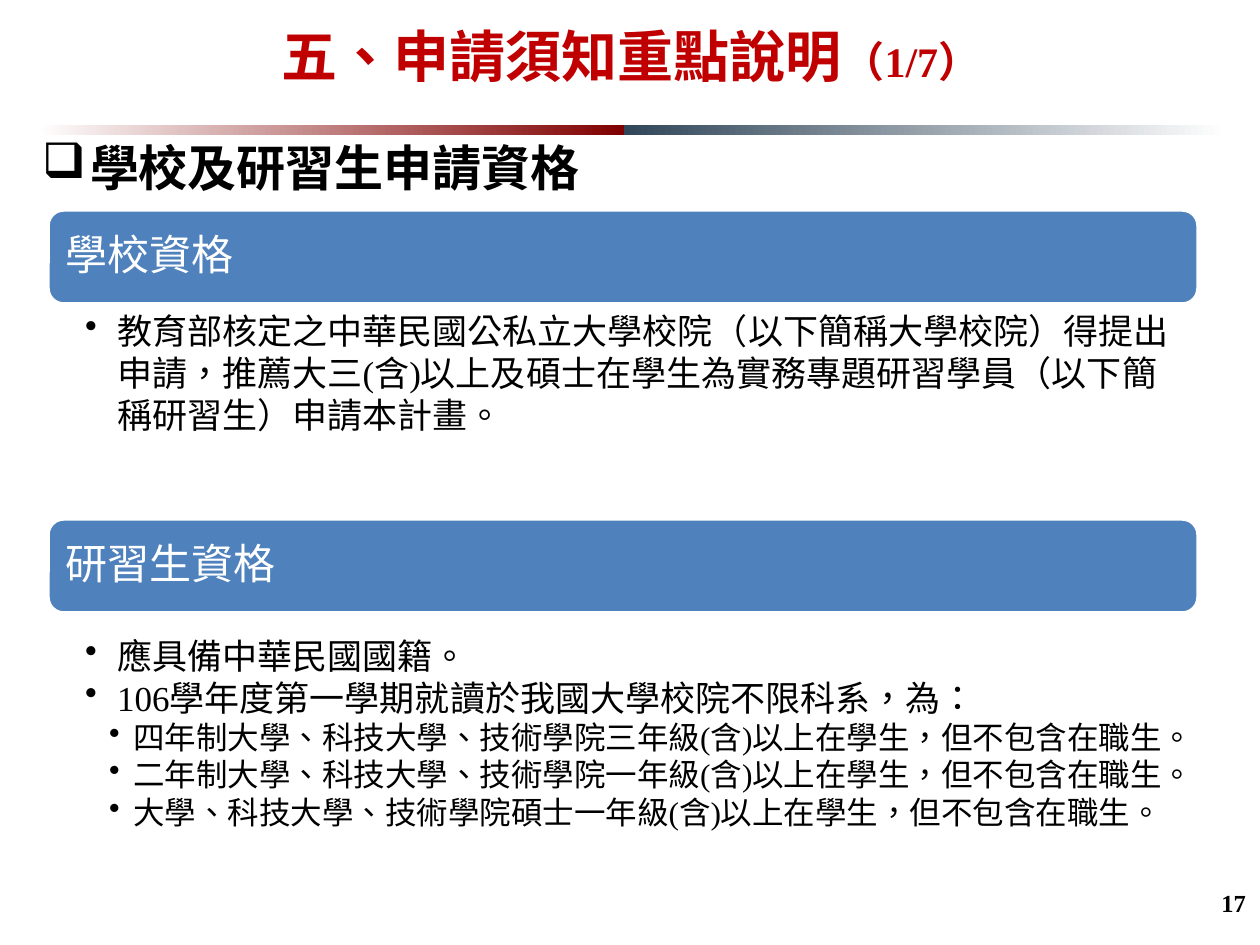
from dataclasses import dataclass

from lxml import etree
from pptx import Presentation
from pptx import util as u
from pptx.dml.color import RGBColor
from pptx.enum import shapes, text
from pptx.oxml import ns

"""Build the slide on school and trainee eligibility."""

PX = 914400 / 126
CJK, LATIN = "Noto Sans CJK SC", "Times New Roman"
BLACK, WHITE, RED, BLUE = "000000", "FFFFFF", "C00000", "4F81BD"


@dataclass
class Box:
    x: int
    y: int
    w: int
    h: int


@dataclass
class Item:
    words: str
    size: int = 20
    spacing: float = 24
    margin: int = 32
    indent: int = 32


@dataclass
class Section:
    label: str
    top: int
    body: Box
    items: list[Item]


def px(n: int) -> int:
    """Turn pixels into EMU."""
    return round(n * PX)


def place(b: Box) -> tuple[int, ...]:
    """Give a box as EMU lengths."""
    return tuple(px(n) for n in (b.x, b.y, b.w, b.h))


def colour(value: str) -> RGBColor:
    """Turn a hex string into a colour."""
    return RGBColor.from_string(value)


def add_run(p, words: str, *, size: int, font: str = LATIN, color: str = BLACK,
            bold: bool = False) -> None:
    """Add formatted text to a paragraph."""
    r = p.add_run()
    r.text = words
    r.font.size, r.font.name, r.font.bold = u.Pt(size), font, bold
    r.font.color.rgb = colour(color)
    rpr = r._r.get_or_add_rPr()
    rpr.set("lang", "zh-TW")
    latin = rpr.find(ns.qn("a:latin"))
    latin.addnext(etree.Element(ns.qn("a:ea"), typeface=CJK))


def set_frame(tf, insets: tuple[int, int, int, int], anchor=text.MSO_ANCHOR.TOP):
    """Set wrapping, insets and anchor, and return the first paragraph."""
    tf.word_wrap = True
    tf.margin_left, tf.margin_top, tf.margin_right, tf.margin_bottom = map(px, insets)
    tf.vertical_anchor = anchor
    return tf.paragraphs[0]


def add_bullet(p, char: str, margin: int, indent: int) -> None:
    """Give a paragraph a hanging bullet."""
    ppr = p._p.get_or_add_pPr()
    ppr.set("marL", str(px(margin)))
    ppr.set("indent", str(-px(indent)))
    etree.SubElement(ppr, ns.qn("a:buChar"), char=char)


def add_band(s, b: Box, start: str, end: str) -> None:
    """Draw one half of the gradient rule."""
    sp = s.shapes.add_shape(shapes.MSO_SHAPE.RECTANGLE, *place(b))
    sp.shadow.inherit = False
    sp.line.fill.background()
    sp.fill.gradient()
    sp.fill.gradient_angle = 0
    for stop, position, value in zip(sp.fill.gradient_stops, (0, 1), (start, end)):
        stop.position = position
        stop.color.rgb = colour(value)


def add_section(s, section: Section) -> None:
    """Draw a labelled bar and the bullets under it."""
    sp = s.shapes.add_shape(shapes.MSO_SHAPE.ROUNDED_RECTANGLE,
                            *place(Box(48, section.top, 1150, 94)))
    sp.shadow.inherit = False
    sp.fill.solid()
    sp.fill.fore_color.rgb = colour(BLUE)
    sp.line.color.rgb = colour(WHITE)
    sp.line.width = u.Pt(2)
    p = set_frame(sp.text_frame, (13, 13, 13, 13), text.MSO_ANCHOR.MIDDLE)
    p.alignment = text.PP_ALIGN.LEFT
    p.line_spacing = 0.9
    add_run(p, section.label, size=24, color=WHITE)

    tf = s.shapes.add_textbox(*place(section.body)).text_frame
    p = set_frame(tf, (37, 4, 20, 4))
    for i, item in enumerate(section.items):
        p = tf.add_paragraph() if i else p
        p.line_spacing = u.Pt(item.spacing)
        add_bullet(p, "•", item.margin, item.indent)
        add_run(p, item.words, size=item.size)


def main() -> None:
    """Build and save the slide."""
    prs = Presentation()
    prs.slide_width, prs.slide_height = u.Inches(10), u.Inches(7.5)
    s = prs.slides.add_slide(prs.slide_layouts[6])

    add_band(s, Box(37, 125, 587, 10), WHITE, "800000")
    add_band(s, Box(624, 125, 602, 10), "314659", WHITE)

    number = s.shapes.add_textbox(*place(Box(997, 882, 262, 52)))
    p = set_frame(number.text_frame, (13, 6, 13, 6))
    p.alignment = text.PP_ALIGN.RIGHT
    add_run(p, "17", size=14, bold=True)

    title = s.shapes.add_textbox(*place(Box(37, 15, 1188, 90)))
    p = set_frame(title.text_frame, (13, 6, 13, 15), text.MSO_ANCHOR.MIDDLE)
    p.alignment = text.PP_ALIGN.CENTER
    add_run(p, "五、申請須知重點說明", size=32, font=CJK, color=RED, bold=True)
    add_run(p, "（1/7）", size=24, color=RED, bold=True)

    heading = s.shapes.add_textbox(*place(Box(29, 137, 1188, 69)))
    p = set_frame(heading.text_frame, (13, 0, 13, 6))
    add_bullet(p, "❑", 48, 48)
    add_run(p, "學校及研習生申請資格", size=28, font=CJK, bold=True)

    schools = ("四年制大學、科技大學、技術學院三年級",
               "二年制大學、科技大學、技術學院一年級",
               "大學、科技大學、技術學院碩士一年級")
    levels = [Item(f"{name}(含)以上在學生，但不包含在職生。", 18, 21.5, 48, 24)
              for name in schools]
    sections = (
        Section("學校資格", 210, Box(48, 305, 1150, 180), [
            Item("教育部核定之中華民國公私立大學校院（以下簡稱大學校院）得提出申請，"
                 "推薦大三(含)以上及碩士在學生為實務專題研習學員"
                 "（以下簡稱研習生）申請本計畫。")]),
        Section("研習生資格", 519, Box(48, 630, 1150, 260), [
            Item("應具備中華民國國籍。"),
            Item("106學年度第一學期就讀於我國大學校院不限科系，為："),
            *levels]),
    )
    for section in sections:
        add_section(s, section)

    prs.save("out.pptx")


if __name__ == "__main__":
    main()
